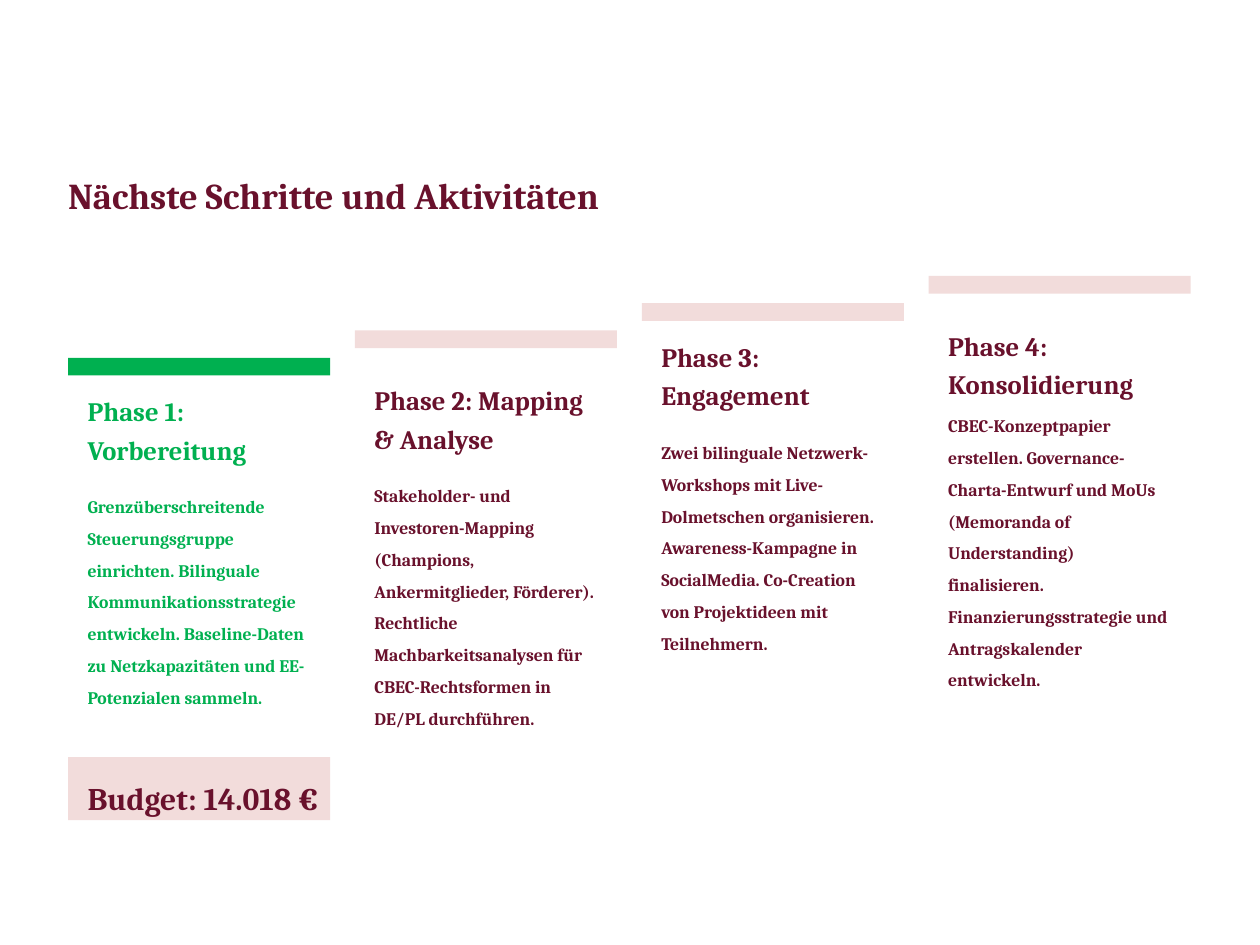
"""Build a slide with four rising project phases and a budget."""
from dataclasses import dataclass

from pptx import Presentation
from pptx.dml.color import RGBColor
from pptx.enum.shapes import MSO_SHAPE
from pptx.enum.text import MSO_ANCHOR, MSO_AUTO_SIZE, PP_ALIGN
from pptx.shapes.autoshape import Shape
from pptx.slide import Slide
from pptx.util import Inches, Pt

RECT = MSO_SHAPE.RECTANGLE
MIDDLE = MSO_ANCHOR.MIDDLE
NO_FIT = MSO_AUTO_SIZE.NONE
LEFT = PP_ALIGN.LEFT


@dataclass(frozen=True)
class Theme:
    """Hold the colours, font and type sizes."""
    wine: str = "69112C"
    green: str = "00B050"
    rose: str = "F2DCDB"
    font: str = "Cambria"
    title: float = 20.8
    total: float = 18
    head: float = 15.2
    body: float = 10.1


@dataclass(frozen=True)
class Box:
    """Hold a place and size in inches."""
    left: float
    top: float
    width: float
    height: float


@dataclass(frozen=True)
class Phase:
    """Hold the wording, heights and colours of one phase."""
    head: str
    body: str
    tall: float
    top: float
    ink: str
    bar: str


THEME = Theme()
EDGE, END, WIDE = 0.54, 9.45, 2.08
LOW, HIGH = 2.84, 2.19
PAD, DROP = 0.155, 0.29
INNER = WIDE - 2 * PAD

PHASES = [
    Phase("Phase 1: Vorbereitung",
          "Grenzüberschreitende Steuerungsgruppe einrichten. Bilinguale "
          "Kommunikationsstrategie entwickeln. Baseline-Daten zu "
          "Netzkapazitäten und EE-Potenzialen sammeln.",
          0.52, 3.76, THEME.green, THEME.green),
    Phase("Phase 2: Mapping & Analyse",
          "Stakeholder- und Investoren-Mapping (Champions, Ankermitglieder, "
          "Förderer). Rechtliche Machbarkeitsanalysen für CBEC-Rechtsformen "
          "in DE/PL durchführen.",
          0.78, 3.8, THEME.wine, THEME.rose),
    Phase("Phase 3: Engagement",
          "Zwei bilinguale Netzwerk-Workshops mit Live-Dolmetschen "
          "organisieren. Awareness-Kampagne in SocialMedia. Co-Creation von "
          "Projektideen mit Teilnehmern.",
          0.52, 3.33, THEME.wine, THEME.rose),
    Phase("Phase 4: Konsolidierung",
          "CBEC-Konzeptpapier erstellen. Governance-Charta-Entwurf und MoUs "
          "(Memoranda of Understanding) finalisieren. Finanzierungsstrategie "
          "und Antragskalender entwickeln.",
          0.78, 3.37, THEME.wine, THEME.rose),
]


def place(shape: Shape, box: Box) -> None:
    """Move and size a shape."""
    shape.left, shape.top = Inches(box.left), Inches(box.top)
    shape.width, shape.height = Inches(box.width), Inches(box.height)


def write(shape: Shape, text: str, size: float, ink: str, space: float) -> None:
    """Fill a shape with one bold paragraph."""
    frame = shape.text_frame
    frame.text = text
    frame.word_wrap = True
    frame.auto_size = NO_FIT
    frame.vertical_anchor = MIDDLE
    frame.margin_left = frame.margin_right = 0
    frame.margin_top = frame.margin_bottom = 0
    para = frame.paragraphs[0]
    para.alignment = LEFT
    para.line_spacing = space
    para.font.name = THEME.font
    para.font.size = Pt(size)
    para.font.bold = True
    para.font.color.rgb = RGBColor.from_string(ink)


def add_text(slide: Slide, box: Box, text: str, size: float, ink: str,
             space: float) -> None:
    """Add a text box."""
    shape = slide.shapes.add_textbox(0, 0, 0, 0)
    place(shape, box)
    write(shape, text, size, ink, space)


def add_bar(slide: Slide, box: Box, fill: str) -> None:
    """Add a plain filled bar."""
    shape = slide.shapes.add_shape(RECT, 0, 0, 0, 0)
    place(shape, box)
    shape.shadow.inherit = False
    shape.fill.solid()
    shape.fill.fore_color.rgb = RGBColor.from_string(fill)
    shape.line.fill.background()


def add_phase(slide: Slide, phase: Phase, left: float, top: float) -> None:
    """Add the bar, heading and body of one phase."""
    add_bar(slide, Box(left, top, WIDE, 0.14), phase.bar)
    add_text(slide, Box(left + PAD, top + DROP, INNER, phase.tall),
             phase.head, THEME.head, phase.ink, 1.2)
    add_text(slide, Box(left + PAD, phase.top, INNER, 1.95),
             phase.body, THEME.body, phase.ink, 1.5)


def main() -> None:
    """Build and save the slide."""
    deck = Presentation()
    deck.slide_width, deck.slide_height = Inches(10), Inches(7.5)
    slide = deck.slides.add_slide(deck.slide_layouts.get_by_name("Title Only"))
    title = slide.shapes.title
    place(title, Box(EDGE, 1.34, END - EDGE, 0.34))
    write(title, "Nächste Schritte und Aktivitäten", THEME.title, THEME.wine, 1.2)

    steps = len(PHASES) - 1
    pitch = (END - WIDE - EDGE) / steps
    rise = (LOW - HIGH) / steps
    for i, phase in enumerate(PHASES):
        add_phase(slide, phase, EDGE + i * pitch, LOW - i * rise)

    add_bar(slide, Box(EDGE, 6.01, WIDE, 0.5), THEME.rose)
    add_text(slide, Box(EDGE + PAD, 6.15, 5.17, 0.21), "Budget: 14.018 €",
             THEME.total, THEME.wine, 1.5)
    deck.save("out.pptx")


if __name__ == "__main__":
    main()
